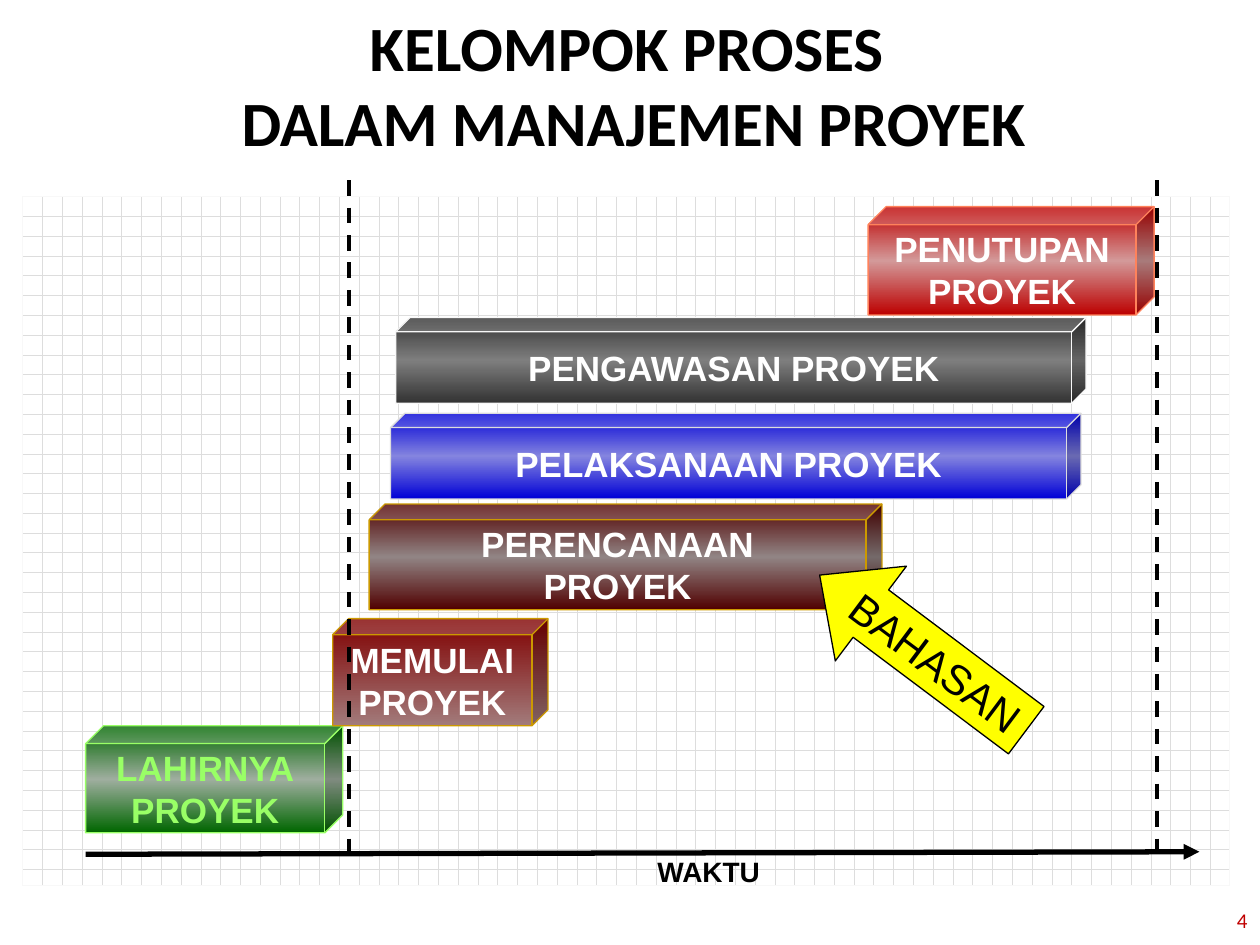
from lxml.etree import SubElement
from pptx import Presentation
from pptx.dml.color import RGBColor
from pptx.enum.dml import MSO_LINE_DASH_STYLE as Dash, MSO_PATTERN_TYPE as Pattern
from pptx.enum.shapes import MSO_CONNECTOR_TYPE as Connector, MSO_SHAPE as Shape
from pptx.enum.text import MSO_ANCHOR as Anchor, PP_ALIGN as Align
from pptx.oxml import parse_xml
from pptx.oxml.ns import nsdecls, qn
from pptx.util import Inches, Pt

COLUMNS, ROWS = 100, 75
WIDTH, HEIGHT = Inches(10), Inches(7.5)

COLORS = {
    "black": "000000", "white": "FFFFFF", "number": "C00000",
    "grid": "DDDDDD", "frame": "F8F8F8", "arrow": "FFFF00",
    "green": "006600", "lime": "99FF66", "maroon": "800000",
    "brown": "500000", "gold": "CC9900", "gray": "333333",
    "red": "BC0000", "coral": "FF825B", "blue": "0000D6",
}

PHASES = [
    ("LAHIRNYA\nPROYEK", (6.8, 57.6, 20.4, 8.5), "green", 66, "lime", "lime", 0.167),
    ("MEMULAI\nPROYEK", (26.4, 49.1, 17.1, 8.5), "maroon", 81, "gold", "white", 0.15),
    ("PERENCANAAN\nPROYEK", (29.3, 40, 40.7, 8.4), "brown", 78, "gold", "white", 0.15),
    ("PENGAWASAN PROYEK", (31.4, 25.2, 54.8, 6.8), "gray", 82, "frame", "white", 0.167),
    ("PENUTUPAN\nPROYEK", (68.9, 16.4, 22.7, 8.6), "red", 69, "coral", "white", 0.167),
    ("PELAKSANAAN PROYEK", (31, 32.8, 54.8, 6.8), "blue", 78, "grid", "white", 0.167),
]


def color(name):
    return RGBColor.from_string(COLORS[name])


def grid(column, row):
    return round(WIDTH * column / COLUMNS), round(HEIGHT * row / ROWS)


def box(left, top, width, height):
    return *grid(left, top), *grid(width, height)


def write(shape, text, size, font, name, bold=False, align=Align.CENTER,
          anchor=Anchor.MIDDLE, wrap=False):
    frame = shape.text_frame
    frame.text = text
    frame.word_wrap = wrap
    frame.vertical_anchor = anchor
    for paragraph in frame.paragraphs:
        paragraph.alignment = align
        for run in paragraph.runs:
            run.font.size = Pt(size)
            run.font.name = font
            run.font.bold = bold
            run.font.color.rgb = color(name)


def add_block(slide, kind, place, line, adjustments=()):
    shape = slide.shapes.add_shape(kind, *box(*place))
    shape.shadow.inherit = False
    shape.line.color.rgb = color(line)
    shape.line.width = Pt(0.75)
    for index, value in enumerate(adjustments):
        shape.adjustments[index] = value
    return shape


def fill_gradient(shape, name, tint, mirrored):
    dark = f'<a:srgbClr val="{COLORS[name]}"/>'
    light = f'<a:srgbClr val="{COLORS[name]}"><a:tint val="{tint * 1000}"/></a:srgbClr>'
    stops = [(0, dark), (50, light), (100, dark)] if mirrored else [(0, dark), (100, light)]
    stop_xml = "".join(f'<a:gs pos="{share * 1000}">{shade}</a:gs>' for share, shade in stops)
    gradient = parse_xml(
        f'<a:gradFill {nsdecls("a")} rotWithShape="1"><a:gsLst>{stop_xml}</a:gsLst>'
        '<a:lin ang="5400000" scaled="1"/></a:gradFill>')
    properties = shape.element.spPr
    properties.find(qn("a:prstGeom")).addnext(gradient)


def add_phase(slide, text, place, fill, tint, line, text_color, depth):
    cube = add_block(slide, Shape.CUBE, place, line, [depth])
    fill_gradient(cube, fill, tint, mirrored=fill != "maroon")
    write(cube, text, 20, "Arial", text_color, bold=True)


def add_line(slide, start, end, width, dashed=False, arrow=False):
    line = slide.shapes.add_connector(Connector.STRAIGHT, *grid(*start), *grid(*end))
    line.line.color.rgb = color("black")
    line.line.width = Pt(width)
    if dashed:
        line.line.dash_style = Dash.DASH
    if arrow:
        SubElement(line.line._get_or_add_ln(), qn("a:tailEnd"), type="triangle")
    SubElement(line.element.spPr, qn("a:effectLst"))


def add_label(slide, text, place, *style, **layout):
    label = slide.shapes.add_textbox(*box(*place))
    write(label, text, *style, wrap=True, **layout)


def add_title(slide, text):
    title = slide.shapes.title
    title.left, title.top, title.width, title.height = box(6.5, 1.6, 87.6, 10.1)
    write(title, text, 36, "Calibri", "black", bold=True, wrap=True)


def add_backdrop(slide):
    backdrop = add_block(slide, Shape.RECTANGLE, (1.8, 15.6, 95.8, 54.7), "frame")
    backdrop.fill.patterned()
    backdrop.fill.pattern = Pattern.DOTTED_GRID
    backdrop.fill.fore_color.rgb = color("grid")
    backdrop.fill.back_color.rgb = color("white")


def add_pointer(slide):
    pointer = add_block(slide, Shape.LEFT_ARROW, (63, 47.1, 20.5, 9.4), "black", [0.5, 0.541])
    pointer.rotation = 36.9
    pointer.fill.solid()
    pointer.fill.fore_color.rgb = color("arrow")
    write(pointer, "BAHASAN", 24, "Arial", "black")


def main():
    presentation = Presentation()
    presentation.slide_width, presentation.slide_height = WIDTH, HEIGHT
    slide = presentation.slides.add_slide(presentation.slide_layouts[5])
    add_title(slide, "KELOMPOK PROSES \vDALAM MANAJEMEN PROYEK")
    add_label(slide, "4", (76.7, 71, 23.3, 4), 12, "Calibri", "number", align=Align.RIGHT)
    add_backdrop(slide)
    for phase in PHASES[:-1]:
        add_phase(slide, *phase)
    add_line(slide, (6.8, 67.8), (95.2, 67.6), 3, arrow=True)
    add_label(slide, "WAKTU", (51.2, 67.3, 15.6, 3.7), 16, "Arial", "black",
              bold=True, align=Align.LEFT, anchor=Anchor.TOP)
    for column in (27.7, 91.8):
        add_line(slide, (column, 14.3), (column, 67.8), 2.25, dashed=True)
    add_phase(slide, *PHASES[-1])
    add_pointer(slide)
    presentation.save("out.pptx")


if __name__ == "__main__":
    main()
